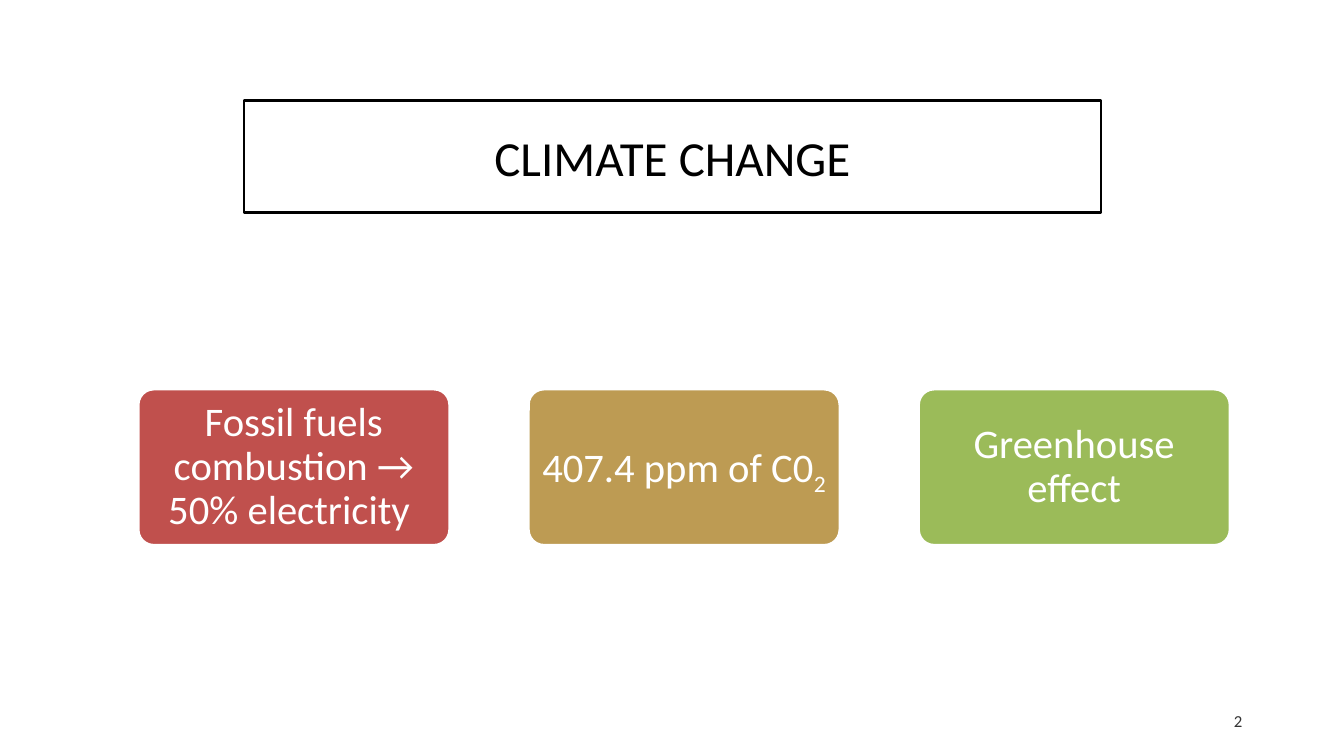
from pptx import Presentation
from pptx.dml.color import RGBColor
from pptx.enum.shapes import MSO_SHAPE
from pptx.enum.text import MSO_ANCHOR, PP_ALIGN
from pptx.util import Inches, Pt

# Content
TITLE = "CLIMATE CHANGE"
PAGE_NUMBER = "2"
CARDS = [  # text, subscript, fill colour
    ("Fossil fuels combustion → 50% electricity ", "", "red"),
    ("407.4 ppm of C0", "2", "gold"),
    ("Greenhouse effect", "", "green"),
]
COLORS = {
    "black": "000000",
    "white": "FFFFFF",
    "gray": "333333",
    "red": "C0504D",
    "gold": "BD9B53",
    "green": "9BBB59",
}
FONT = "Calibri"

# Layout in inches
CARD_LEFT, CARD_TOP, CARD_STEP = 1.37, 3.86, 3.87
CARD_WIDTH, CARD_HEIGHT = 3.09, 1.55


def color(name):
    return RGBColor.from_string(COLORS[name])


def add_box(slide, kind, box, fill, line):
    shape = slide.shapes.add_shape(kind, *map(Inches, box))
    shape.shadow.inherit = False
    shape.fill.solid()
    shape.fill.fore_color.rgb = color(fill)
    shape.line.color.rgb = color(line)
    shape.line.width = Pt(2)
    return shape


def write(shape, text, size, font_color, alignment):
    text_frame = shape.text_frame
    text_frame.text = text
    text_frame.word_wrap = True
    text_frame.vertical_anchor = MSO_ANCHOR.MIDDLE
    paragraph = text_frame.paragraphs[0]
    paragraph.alignment = alignment
    style(paragraph.runs[0], size, font_color)
    return paragraph


def style(run, size, font_color):
    run.font.name = FONT
    run.font.size = Pt(size)
    run.font.color.rgb = color(font_color)


def add_card(slide, index, text, subscript, fill):
    left = CARD_LEFT + index * CARD_STEP
    card = add_box(slide, MSO_SHAPE.ROUNDED_RECTANGLE,
                   (left, CARD_TOP, CARD_WIDTH, CARD_HEIGHT), fill, "white")
    card.adjustments[0] = 0.1
    paragraph = write(card, text, 29, "white", PP_ALIGN.CENTER)
    paragraph.line_spacing = 0.9
    text_frame = card.text_frame
    text_frame.margin_left = text_frame.margin_right = Inches(0.06)
    text_frame.margin_top = text_frame.margin_bottom = Inches(0.04)
    if subscript:
        run = paragraph.add_run()
        run.text = subscript
        style(run, 29, "white")
        run.font._element.set("baseline", "-25000")


def main():
    presentation = Presentation()
    presentation.slide_width = Inches(13.33)
    presentation.slide_height = Inches(7.5)
    slide = presentation.slides.add_slide(presentation.slide_layouts[6])

    # Title frame
    title = add_box(slide, MSO_SHAPE.RECTANGLE, (2.42, 1, 8.5, 1.11), "white", "black")
    write(title, TITLE, 35, "black", PP_ALIGN.CENTER)

    # Row of cards
    for index, card in enumerate(CARDS):
        add_card(slide, index, *card)

    # Page number
    number = slide.shapes.add_textbox(*map(Inches, (9.42, 6.95, 3, 0.4)))
    paragraph = write(number, PAGE_NUMBER, 12, "gray", PP_ALIGN.RIGHT)
    paragraph.space_after = Pt(6)

    presentation.save("out.pptx")


if __name__ == "__main__":
    main()
